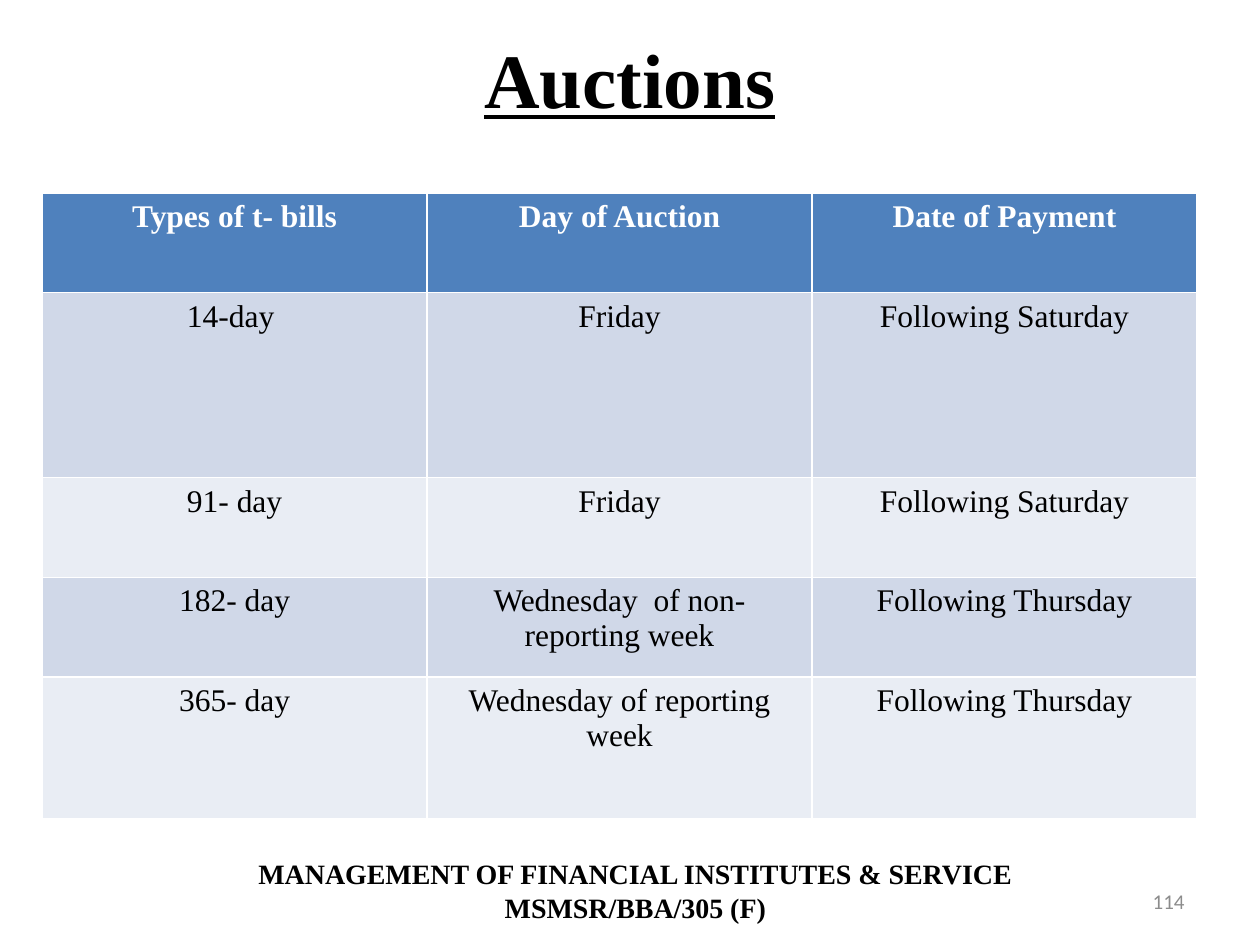
from pptx import Presentation
from pptx.dml.color import RGBColor
from pptx.enum.text import MSO_ANCHOR as ANCHOR, PP_ALIGN as ALIGN
from pptx.util import Cm, Pt

COLORS = {
    "text": "000000",
    "white": "FFFFFF",
    "number": "8C8C8C",
    "header": "4F81BD",
    "odd": "D0D8E8",
    "even": "E9EDF4",
}


def write(tf, text, size=18, font="Times New Roman", color="text",
          bold=False, underline=False, align=ALIGN.CENTER):
    tf.word_wrap = True
    p = tf.paragraphs[0]
    p.text = text
    p.alignment = align
    for r in p.runs:
        r.font.size = Pt(size)
        r.font.name = font
        r.font.bold = bold
        r.font.underline = underline
        r.font.color.rgb = RGBColor.from_string(COLORS[color])


prs = Presentation()
prs.slide_width, prs.slide_height = Cm(25.4), Cm(19.05)
s = prs.slides.add_slide(prs.slide_layouts[5])

title = s.shapes.title
title.left, title.top, title.width, title.height = Cm(1.27), Cm(0.64), Cm(22.86), Cm(3.18)
title.text_frame.vertical_anchor = ANCHOR.TOP
title.text_frame.margin_top = 0
write(title.text_frame, "Auctions", size=44, bold=True, underline=True)

footer = s.shapes.add_textbox(Cm(2.13), Cm(17.15), Cm(21.36), Cm(1.63))
write(footer.text_frame, "MANAGEMENT OF FINANCIAL INSTITUTES & SERVICE\vMSMSR/BBA/305 (F)",
      size=16, bold=True)

number = s.shapes.add_textbox(Cm(18.2), Cm(17.66), Cm(5.93), Cm(1.01))
number.text_frame.vertical_anchor = ANCHOR.MIDDLE
write(number.text_frame, "114", size=12, font="Calibri", color="number", align=ALIGN.RIGHT)

rows = [
    (2.01, ["Types of t- bills", "Day of Auction", "Date of Payment"]),
    (3.73, ["14-day ", "Friday", "Following Saturday"]),
    (2.01, ["91- day", "Friday", "Following Saturday"]),
    (2.01, ["182- day", "Wednesday  of non- reporting week", "Following Thursday"]),
    (2.86, ["365- day", "Wednesday of reporting week", "Following Thursday"]),
]
table = s.shapes.add_table(len(rows), 3, Cm(0.85), Cm(3.89), Cm(23.28), Cm(12.62)).table
for i, (height, texts) in enumerate(rows):
    table.rows[i].height = Cm(height)
    head = i == 0
    fill = "header" if head else "odd" if i % 2 else "even"
    for j, text in enumerate(texts):
        cell = table.cell(i, j)
        cell.fill.solid()
        cell.fill.fore_color.rgb = RGBColor.from_string(COLORS[fill])
        write(cell.text_frame, text, color="white" if head else "text", bold=head)

prs.save("out.pptx")
